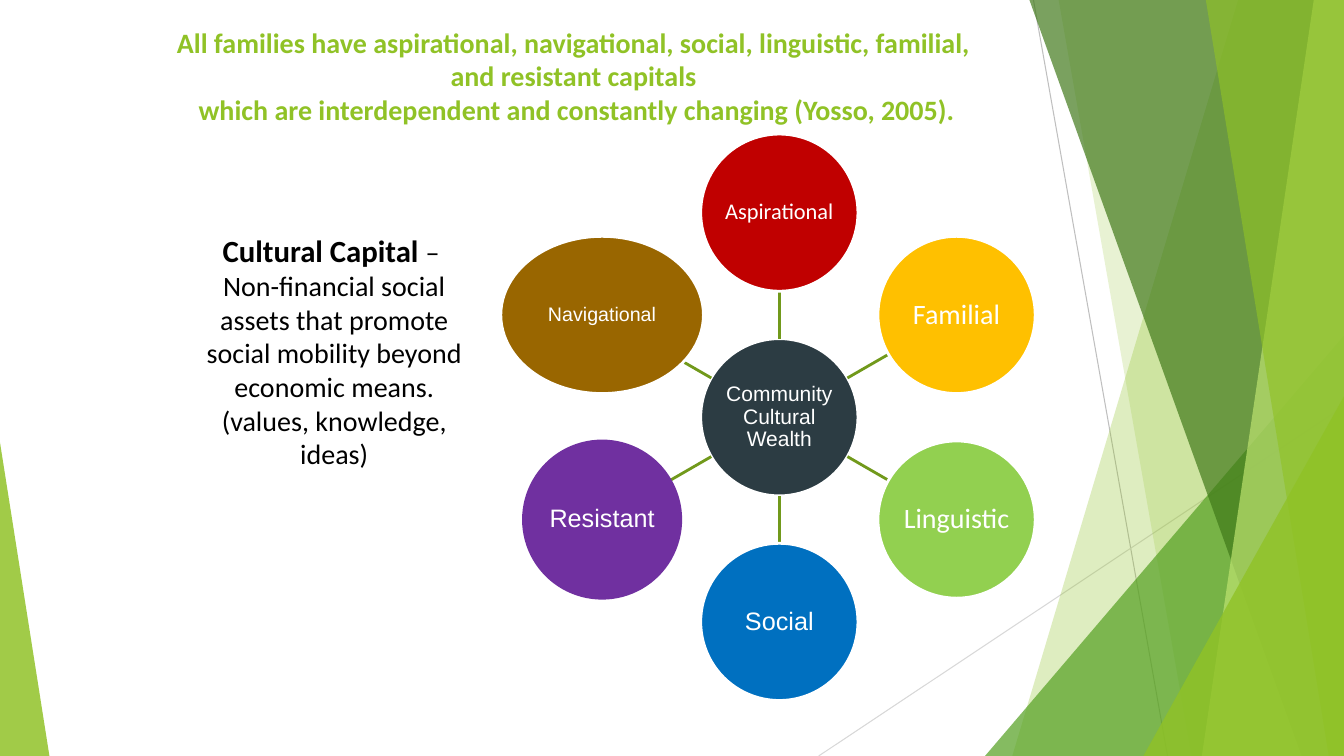
import math

from lxml import etree
from pptx import Presentation
from pptx.dml.color import RGBColor
from pptx.enum import shapes, text
from pptx.oxml.ns import qn
from pptx.util import Inches, Pt

# Content
TITLE = [
    "All families have aspirational, navigational, social, linguistic, familial, ",
    "and resistant capitals ",
    "which are interdependent and constantly changing (Yosso, 2005).",
]
DEFINITION = [
    "Cultural Capital – ",
    "Non-financial social assets that promote social mobility beyond economic means.",
    "(values, knowledge, ideas)",
]
TERM = "Cultural Capital "
HUB = ("Community Cultural Wealth", "2C3C43", "Arial", 15)
# Clockwise from the top: label, fill, font, size, circle width, spoke end radius
CAPITALS = [
    ("Aspirational", "C00000", "Calibri", 16, 1.56, 1.25),
    ("Familial", "FFC000", "Calibri", 20, 1.56, 1.25),
    ("Linguistic", "92D050", "Calibri", 20, 1.56, 1.25),
    ("Social", "0070C0", "Arial", 18, 1.56, 1.25),
    ("Resistant", "7030A0", "Arial", 18, 1.56, 1.25),
    ("Navigational", "996600", "Arial", 14, 2.01, 1.10),
]

THEME = {
    "accent": "90C226", "spoke": "71991B", "text": "000000", "light": "FFFFFF",
    "body_font": "Calibri", "body_size": 20, "term_size": 22,
}

# Background facets, back to front
# Polygon: corner points; triangle: left, top, width, height, apex position
HAIRLINES = [((10.25, 0), (11.58, 7.5), "BFBFBF"), ((13.33, 4.03), (8.12, 7.5), "D8D8D8")]
FACETS = [
    ("polygon", [(12.28, 0), (13.33, 0), (13.33, 7.5), (10.04, 7.5)], "90C226", 29),
    ("polygon", [(10.5, 0), (13.33, 0), (13.33, 7.5), (11.82, 7.5)], "90C226", 20),
    ("triangle", (9.77, 3.33, 3.56, 4.17, 1), "54A021", 71),
    ("polygon", [(10.21, 0), (13.33, 0), (13.33, 7.5), (12.91, 7.5)], "3F7818", 69),
    ("polygon", [(13.03, 0), (13.33, 0), (13.33, 7.5), (11.92, 7.5)], "BFE471", 69),
    ("polygon", [(11.96, 0), (13.33, 0), (13.33, 7.5), (13.18, 7.5)], "90C226", 64),
    ("triangle", (11.34, 3.93, 1.99, 3.57, 1), "90C226", 80),
    ("triangle", (0, 4.39, 0.49, 3.11, 0), "90C226", 84),
]

# Wheel geometry
CENTER = (7.73, 4.14)
CIRCLE = 1.56
ORBIT = 2.03
SPOKE_START = 0.78

presentation = Presentation()
presentation.slide_width, presentation.slide_height = Inches(13.33), Inches(7.5)
slide = presentation.slides.add_slide(presentation.slide_layouts[6])


def rgb(value):
    return RGBColor.from_string(value)


def style_run(run, font, size, color, bold=False):
    run.font.name, run.font.size, run.font.bold = font, Pt(size), bold
    run.font.color.rgb = rgb(color)


def add_line(start, end, color, width):
    line = slide.shapes.add_connector(
        shapes.MSO_CONNECTOR.STRAIGHT, *[Inches(value) for value in (*start, *end)])
    line.line.color.rgb, line.line.width = rgb(color), Pt(width)
    etree.SubElement(line._element.spPr, qn("a:effectLst"))


def add_facet(kind, geometry, color, opacity):
    if kind == "polygon":
        points = [(Inches(x), Inches(y)) for x, y in geometry]
        builder = slide.shapes.build_freeform(*points[0])
        builder.add_line_segments(points[1:], close=True)
        shape = builder.convert_to_shape()
    else:
        *box, apex = geometry
        shape = slide.shapes.add_shape(
            shapes.MSO_SHAPE.ISOSCELES_TRIANGLE, *[Inches(value) for value in box])
        shape.adjustments[0] = apex
    shape.shadow.inherit = False
    shape.line.fill.background()
    shape.fill.solid()
    shape.fill.fore_color.rgb = rgb(color)
    color_element = shape._element.spPr.find(qn("a:solidFill"))[0]
    etree.SubElement(color_element, qn("a:alpha"), val=str(opacity * 1000))


def polar(radius, angle):
    return CENTER[0] + radius * math.sin(angle), CENTER[1] - radius * math.cos(angle)


def add_circle(center, width, label, fill, font, size):
    shape = slide.shapes.add_shape(
        shapes.MSO_SHAPE.OVAL, Inches(center[0] - width / 2),
        Inches(center[1] - CIRCLE / 2), Inches(width), Inches(CIRCLE))
    shape.shadow.inherit = False
    shape.fill.solid()
    shape.fill.fore_color.rgb = rgb(fill)
    shape.line.color.rgb = rgb(fill if label == "Resistant" else THEME["light"])
    shape.line.width = Pt(2)
    frame = shape.text_frame
    frame.text = label
    frame.word_wrap = True
    frame.vertical_anchor = text.MSO_ANCHOR.MIDDLE
    frame.margin_left = frame.margin_right = Inches(0.01)
    frame.margin_top = frame.margin_bottom = Inches(0.01)
    paragraph = frame.paragraphs[0]
    paragraph.alignment, paragraph.line_spacing = text.PP_ALIGN.CENTER, 0.9
    style_run(paragraph.runs[0], font, size, THEME["light"])


def add_text(box, lines, color, bold):
    frame = slide.shapes.add_textbox(*[Inches(value) for value in box]).text_frame
    frame.word_wrap = True
    frame.text = "\n".join(lines)
    for paragraph in frame.paragraphs:
        paragraph.alignment = text.PP_ALIGN.CENTER
        style_run(paragraph.runs[0], THEME["body_font"], THEME["body_size"], color, bold)
    return frame


# Background
for start, end, color in HAIRLINES:
    add_line(start, end, color, 0.75)
for facet in FACETS:
    add_facet(*facet)

# Wheel: hub, then a spoke and a circle every 60 degrees
add_circle(CENTER, CIRCLE, *HUB)
for index, (label, fill, font, size, width, spoke_end) in enumerate(CAPITALS):
    angle = index * math.tau / len(CAPITALS)
    add_line(polar(SPOKE_START, angle), polar(spoke_end, angle), THEME["spoke"], 2)
    add_circle(polar(ORBIT, angle), width, label, fill, font, size)

# Definition, with its term set larger and bold
definition = add_text((1.94, 2.25, 2.75, 2.49), DEFINITION, THEME["text"], False)
heading = definition.paragraphs[0]
heading.runs[0].text = TERM
style_run(heading.runs[0], THEME["body_font"], THEME["term_size"], THEME["text"], True)
dash = heading.add_run()
dash.text = DEFINITION[0].removeprefix(TERM)
style_run(dash, THEME["body_font"], THEME["body_size"], THEME["text"])

# Title
add_text((0, 0.2, 11.44, 1.11), TITLE, THEME["accent"], True)

presentation.save("out.pptx")
